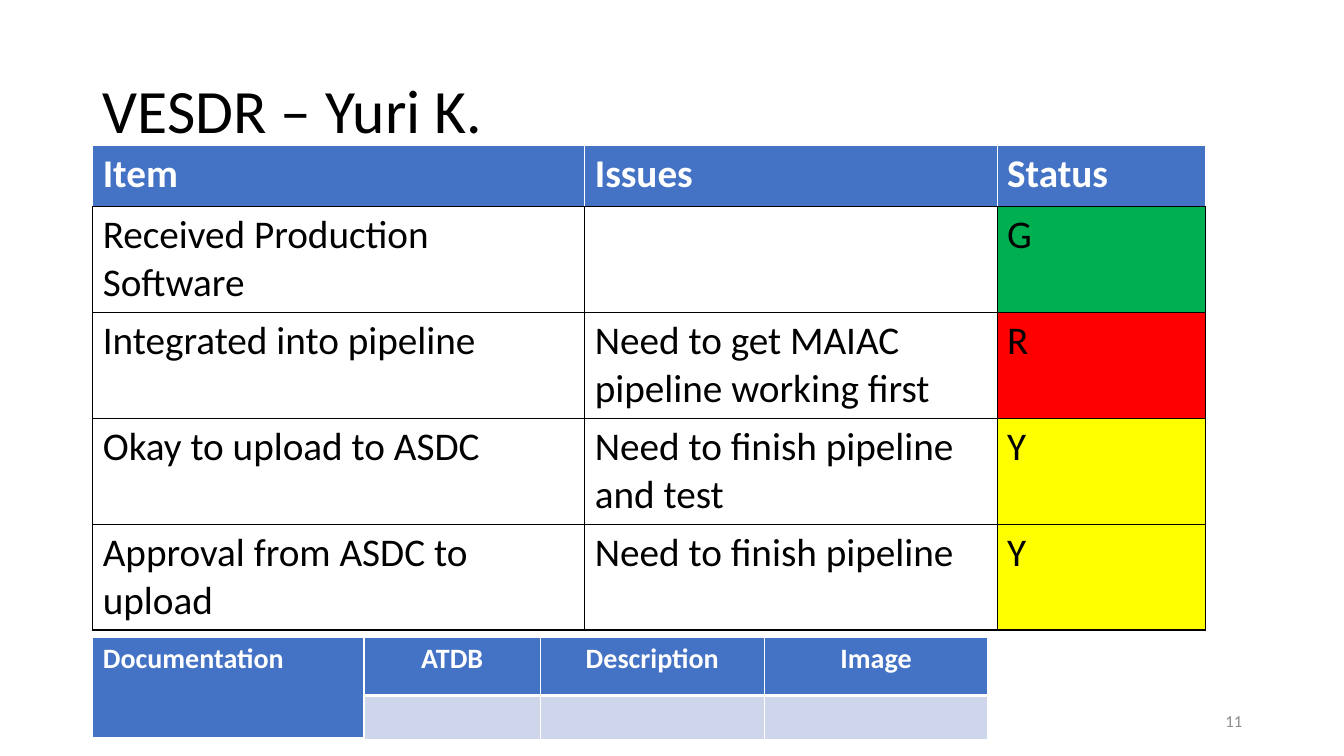
import pptx
import pptx.util
import pptx.dml.color
import pptx.enum.text
import pptx.oxml
import pptx.oxml.ns

ALIGN = pptx.enum.text.PP_ALIGN
MIDDLE = pptx.enum.text.MSO_ANCHOR.MIDDLE
WHITE, BLACK, BLUE, PALE, GREY = "FFFFFF", "000000", "4472C4", "CFD5EA", "8C8C8C"
STATUS_FILLS = {"G": "00B050", "R": "FF0000", "Y": "FFFF00"}


def px(length):
    """100 px to the inch."""
    return pptx.util.Emu(length * 9144)


def color(code):
    return pptx.dml.color.RGBColor.from_string(code)


class PageBuilder:
    font = "Calibri"

    def __init__(self, deck):
        self.page = deck.slides.add_slide(deck.slide_layouts[5])

    def add_text(self, frame, text, size, ink, align=ALIGN.LEFT, bold=False):
        para = frame.paragraphs[0]
        para.alignment = align
        span = para.add_run()
        span.text = text
        style = {"name": self.font, "size": pptx.util.Pt(size), "bold": bold}
        for name, value in style.items():
            setattr(span.font, name, value)
        span.font.color.rgb = color(ink)
        return para

    def place(self, box, bounds):
        for name, value in zip(("left", "top", "width", "height"), bounds):
            setattr(box, name, px(value))
        box.text_frame.word_wrap = True
        box.text_frame.vertical_anchor = MIDDLE

    def title(self, text, bounds):
        box = self.page.shapes.title
        self.place(box, bounds)
        self.add_text(box.text_frame, text, 44, BLACK).line_spacing = 0.9

    def page_number(self, text, bounds):
        box = self.page.shapes.add_textbox(0, 0, 0, 0)
        self.place(box, bounds)
        self.add_text(box.text_frame, text, 12, GREY, ALIGN.RIGHT)

    def table(self, left, top, columns, rows):
        frame = self.page.shapes.add_table(
            len(rows), len(columns), px(left), px(top), px(sum(columns)), px(sum(rows)))
        grid = frame.table
        for column, width in zip(grid.columns, columns):
            column.width = px(width)
        for row, height in zip(grid.rows, rows):
            row.height = px(height)
        return grid

    def cell(self, cell, fill, edge, bottom, text="", **style):
        """Edge and bottom are (colour, points) pairs."""
        properties = cell._tc.get_or_add_tcPr()
        for side in "LRTB":
            ink, points = bottom if side == "B" else edge
            properties.append(pptx.oxml.parse_xml(
                f'<a:ln{side} {pptx.oxml.ns.nsdecls("a")} w="{points * 12700}">'
                f'<a:solidFill><a:srgbClr val="{ink}"/></a:solidFill></a:ln{side}>'))
        if fill:
            cell.fill.solid()
            cell.fill.fore_color.rgb = color(fill)
        else:
            cell.fill.background()
        if text:
            self.add_text(cell.text_frame, text, **style)


def main():
    deck = pptx.Presentation()
    deck.slide_width, deck.slide_height = px(1333), px(750)
    builder = PageBuilder(deck)
    white, black, thick = (WHITE, 1), (BLACK, 1), (WHITE, 3)

    # Title and page number
    builder.title("VESDR – Yuri K.", (92, 40, 1150, 145))
    builder.page_number("11", (942, 695, 300, 40))

    # Status table
    items = [
        ("Received Production Software", "", "G"),
        ("Integrated into pipeline", "Need to get MAIAC pipeline working first", "R"),
        ("Okay to upload to ASDC", "Need to finish pipeline and test", "Y"),
        ("Approval from ASDC to upload", "Need to finish pipeline", "Y"),
    ]
    status = builder.table(92, 144, [488, 409, 207], [61] + [105] * len(items))
    for column, heading in enumerate(("Item", "Issues", "Status")):
        builder.cell(status.cell(0, column), BLUE, white, black,
                     heading, size=28, ink=WHITE, bold=True)
    for row, item in enumerate(items, 1):
        for column, text in enumerate(item):
            builder.cell(status.cell(row, column), STATUS_FILLS.get(text), black, black,
                         text, size=28, ink=BLACK)

    # Documentation table
    documents = builder.table(92, 632, [269, 175, 222, 222], [58, 41])
    documents.cell(0, 0).merge(documents.cell(1, 0))
    for column, heading in enumerate(("Documentation", "ATDB", "Description", "Image")):
        builder.cell(documents.cell(0, column), BLUE, white, thick, heading, size=20,
                     ink=WHITE, bold=True, align=ALIGN.CENTER if column else ALIGN.LEFT)
        builder.cell(documents.cell(1, column), PALE if column else BLUE, white, white)

    deck.save("out.pptx")


if __name__ == "__main__":
    main()
